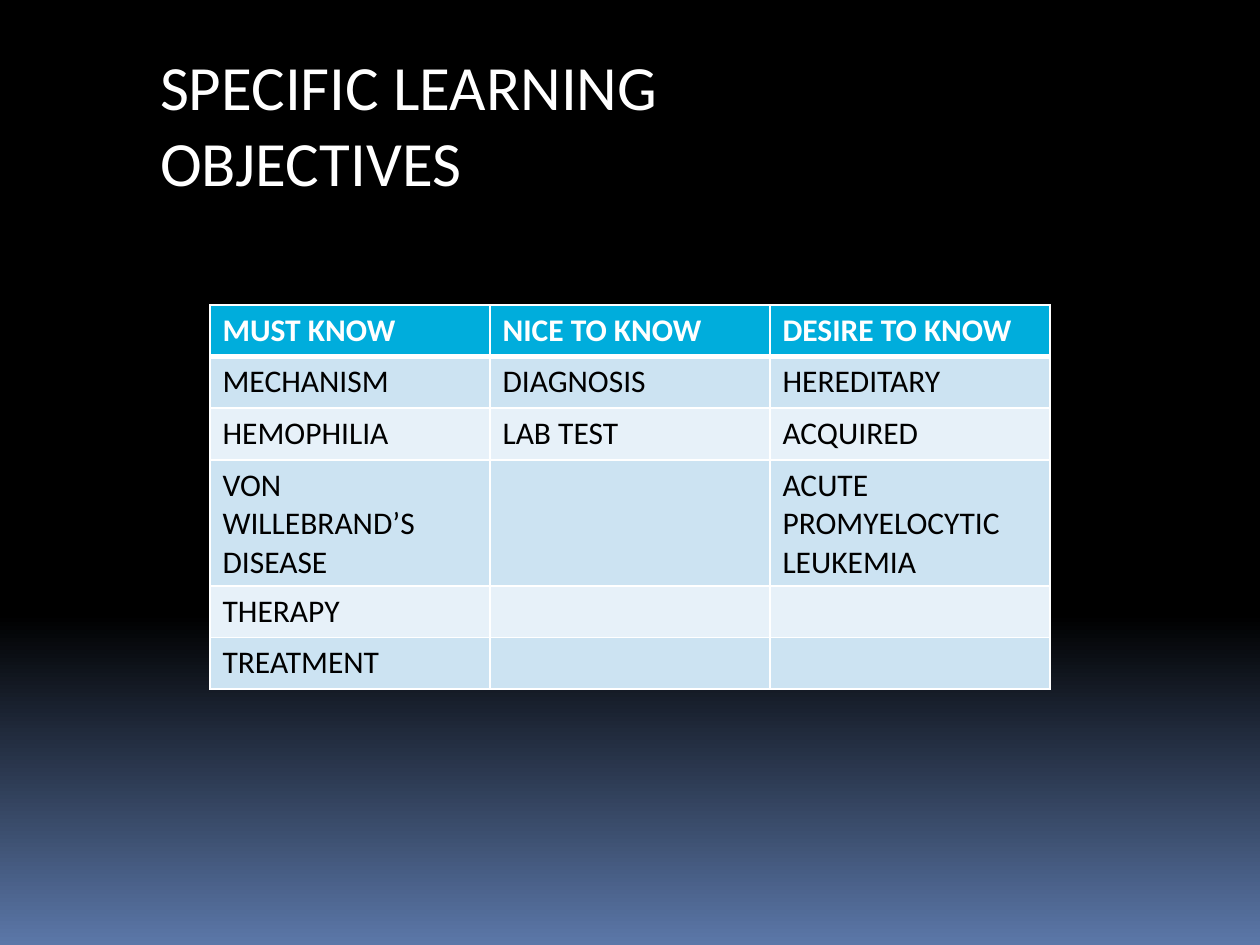
from lxml.etree import SubElement
from pptx import Presentation
from pptx.dml.color import RGBColor
from pptx.enum.text import MSO_ANCHOR, MSO_AUTO_SIZE, PP_ALIGN
from pptx.oxml.ns import qn
from pptx.util import Inches, Pt

BLACK = RGBColor(0x00, 0x00, 0x00)
WHITE = RGBColor(0xFF, 0xFF, 0xFF)
SLATE = RGBColor(0x5B, 0x77, 0xA8)
CYAN = RGBColor(0x00, 0xAD, 0xDC)
BANDS = RGBColor(0xE7, 0xF1, 0xF9), RGBColor(0xCC, 0xE3, 0xF2)
FONT = "Calibri"

WIDTH, HEIGHT = Inches(10), Inches(7.5)
ROW = Inches(0.41)
TALL = Inches(1)
GOALS = [
    ["MUST KNOW", "NICE TO KNOW", "DESIRE TO KNOW"],
    ["MECHANISM", "DIAGNOSIS", "HEREDITARY"],
    ["HEMOPHILIA", "LAB TEST", "ACQUIRED"],
    ["VON WILLEBRAND’S DISEASE", "", "ACUTE PROMYELOCYTIC LEUKEMIA"],
    ["THERAPY", "", ""],
    ["TREATMENT", "", ""],
]


def style(para, size, color, bold=False):
    for run in para.runs:
        font = run.font
        font.name, font.size, font.bold = FONT, Pt(size), bold
        font.color.rgb = color


def paint_back(slide):
    fill = slide.background.fill
    fill.gradient()
    fill.gradient_angle = 270
    for stop, place, color in zip(fill.gradient_stops, (0.65, 1), (BLACK, SLATE)):
        stop.position = place
        stop.color.rgb = color


def add_title(slide, left, top, width, height):
    title = slide.shapes.title
    title.left, title.top, title.width, title.height = left, top, width, height
    frame = title.text_frame
    frame.text = "SPECIFIC LEARNING OBJECTIVES"
    frame.word_wrap = True
    frame.auto_size = MSO_AUTO_SIZE.SHAPE_TO_FIT_TEXT
    frame.vertical_anchor = MSO_ANCHOR.TOP
    para = frame.paragraphs[0]
    para.alignment = PP_ALIGN.LEFT
    style(para, 36, WHITE)


def set_edges(cell, widths):
    """Draw white cell borders; widths maps each side tag to points."""
    props = cell._tc.get_or_add_tcPr()
    for spot, (side, points) in enumerate(widths.items()):
        line = SubElement(props, qn(f"a:{side}"), w=str(Pt(points)))
        fill = SubElement(line, qn("a:solidFill"))
        SubElement(fill, qn("a:srgbClr"), val=str(WHITE))
        props.insert(spot, line)


def add_goals(slide, left, top, width):
    count = len(GOALS)
    frame = slide.shapes.add_table(
        count, len(GOALS[0]), left, top, width, ROW * count)
    table = frame.table
    for r, texts in enumerate(GOALS):
        head = r == 0
        table.rows[r].height = TALL if any(len(t) > 20 for t in texts) else ROW
        for c, text in enumerate(texts):
            cell = table.cell(r, c)
            cell.text = text
            style(cell.text_frame.paragraphs[0], 18, WHITE if head else BLACK, head)
            cell.fill.solid()
            cell.fill.fore_color.rgb = CYAN if head else BANDS[r % 2]
            set_edges(cell, {"lnL": 1, "lnR": 1, "lnT": 3 if r == 1 else 1,
                             "lnB": 3 if head else 1})


def main():
    deck = Presentation()
    deck.slide_width, deck.slide_height = WIDTH, HEIGHT
    slide = deck.slides.add_slide(deck.slide_layouts[5])
    paint_back(slide)
    add_title(slide, Inches(1.17), Inches(0.33), Inches(4.83), Inches(1.31))
    add_goals(slide, WIDTH // 6, Inches(2.42), WIDTH * 2 // 3)
    deck.save("out.pptx")


if __name__ == "__main__":
    main()
